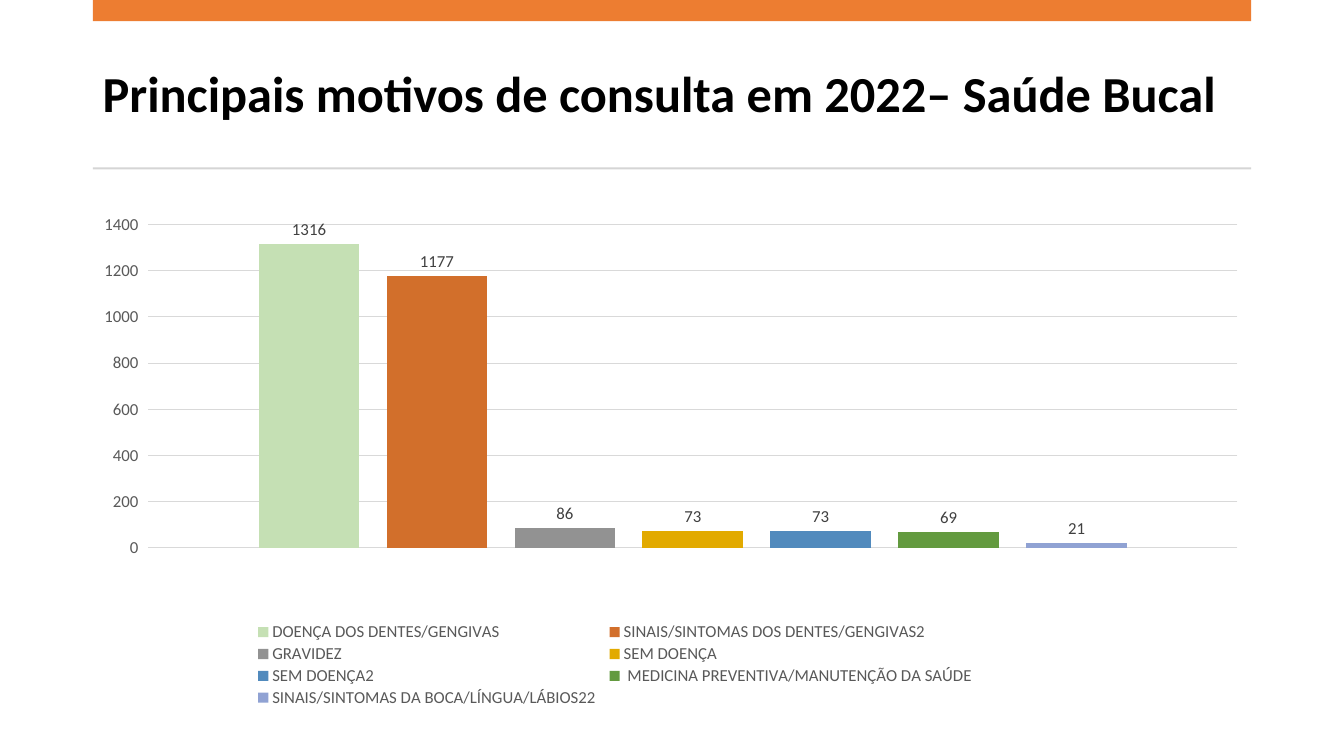
from pptx import Presentation, util as u
from pptx.chart.data import CategoryChartData
from pptx.dml.color import RGBColor
from pptx.enum import chart as ch, shapes, text
from pptx.oxml import parse_xml
from pptx.oxml.ns import nsdecls

THEME = {
    "font": "Calibri", "title_size": 36, "chart_size": 12,
    "title": "000000", "bar": "ED7D31", "rule": "D5D5D5",
    "axis": "595959", "label": "404040", "grid": "D9D9D9",
}
REASONS = [
    ("DOENÇA DOS DENTES/GENGIVAS", 1316, "C5E0B4"),
    ("SINAIS/SINTOMAS DOS DENTES/GENGIVAS2", 1177, "D26F2B"),
    ("GRAVIDEZ", 86, "929292"),
    ("SEM DOENÇA", 73, "E2AA00"),
    ("SEM DOENÇA2", 73, "518ABD"),
    (" MEDICINA PREVENTIVA/MANUTENÇÃO DA SAÚDE", 69, "639A3F"),
    ("SINAIS/SINTOMAS DA BOCA/LÍNGUA/LÁBIOS22", 21, "90A2D3"),
]
PLOT_SHARES = (0.048, 0.022, 0.94, 0.652)
LEGEND_SHARES = (0.136, 0.82, 0.63, 0.18)


def style_font(font, size, color, bold=False):
    values = {"name": THEME["font"], "size": u.Pt(size), "bold": bold}
    for attribute, value in values.items():
        setattr(font, attribute, value)
    font.color.rgb = RGBColor.from_string(color)


def band(top, height):
    """Full content-width box at the given top and height in inches."""
    return u.Inches(0.92), u.Inches(top), u.Inches(11.49), u.Inches(height)


deck = Presentation()
deck.slide_width, deck.slide_height = u.Inches(13.33), u.Inches(7.5)
slide = deck.slides.add_slide(deck.slide_layouts[6])

# Top bar and rule below the title
for top, height, color in ((0, 0.21, "bar"), (1.66, 0.02, "rule")):
    stripe = slide.shapes.add_shape(shapes.MSO_SHAPE.RECTANGLE, *band(top, height))
    stripe.shadow.inherit = False
    stripe.fill.solid()
    stripe.fill.fore_color.rgb = RGBColor.from_string(THEME[color])
    stripe.line.fill.background()

# Title
heading = slide.shapes.add_textbox(*band(0.36, 1.18)).text_frame
heading.word_wrap = True
heading.vertical_anchor = text.MSO_ANCHOR.MIDDLE
heading_line = heading.paragraphs[0]
heading_line.line_spacing = 0.9
heading_run = heading_line.add_run()
heading_run.text = "Principais motivos de consulta em 2022– Saúde Bucal"
style_font(heading_run.font, THEME["title_size"], THEME["title"], bold=True)

# Chart of consultation reasons
consultations = CategoryChartData()
consultations.categories = ["1"]
for reason, count, _ in REASONS:
    consultations.add_series(reason, [count])
chart = slide.shapes.add_chart(
    ch.XL_CHART_TYPE.COLUMN_CLUSTERED, *band(2.12, 4.92), consultations).chart
style_font(chart.font, THEME["chart_size"], THEME["axis"])
chart.has_title = False

# Columns and their value labels
columns = chart.plots[0]
columns.vary_by_categories = False
columns.gap_width, columns.overlap = 219, -27
for series, (_, _, color) in zip(columns.series, REASONS):
    series.format.fill.solid()
    series.format.fill.fore_color.rgb = RGBColor.from_string(color)
    series.data_labels.show_value = True
    series.data_labels.position = ch.XL_LABEL_POSITION.OUTSIDE_END
    style_font(series.data_labels.font, THEME["chart_size"], THEME["label"])

# Axes
chart.category_axis.visible = False
counts = chart.value_axis
axis_format = {
    "minimum_scale": 0, "maximum_scale": 1400, "major_unit": 200,
    "has_major_gridlines": True, "major_tick_mark": ch.XL_TICK_MARK.OUTSIDE,
}
for attribute, value in axis_format.items():
    setattr(counts, attribute, value)
counts.format.line.fill.background()
style_font(counts.tick_labels.font, THEME["chart_size"], THEME["axis"])
gridline = counts.major_gridlines.format.line
gridline.width = u.Pt(0.75)
gridline.color.rgb = RGBColor.from_string(THEME["grid"])

# Legend
chart.has_legend = True
chart.legend.position = ch.XL_LEGEND_POSITION.BOTTOM
chart.legend.include_in_layout = False
style_font(chart.legend.font, THEME["chart_size"], THEME["axis"])

# Places of the inner plot area and the legend, as shares of the chart
modes = "".join(f'<c:{side}Mode val="edge"/>' for side in "xy")
for part, index, target, shares in (
    (chart.element.chart.plotArea, 0, '<c:layoutTarget val="inner"/>', PLOT_SHARES),
    (chart.element.chart.legend, 1, "", LEGEND_SHARES),
):
    for old_layout in part.xpath("c:layout"):
        part.remove(old_layout)
    sides = "".join(f'<c:{side} val="{share}"/>' for side, share in zip("xywh", shares))
    part.insert(index, parse_xml(
        f'<c:layout {nsdecls("c")}><c:manualLayout>{target}{modes}{sides}'
        "</c:manualLayout></c:layout>"))

deck.save("out.pptx")
